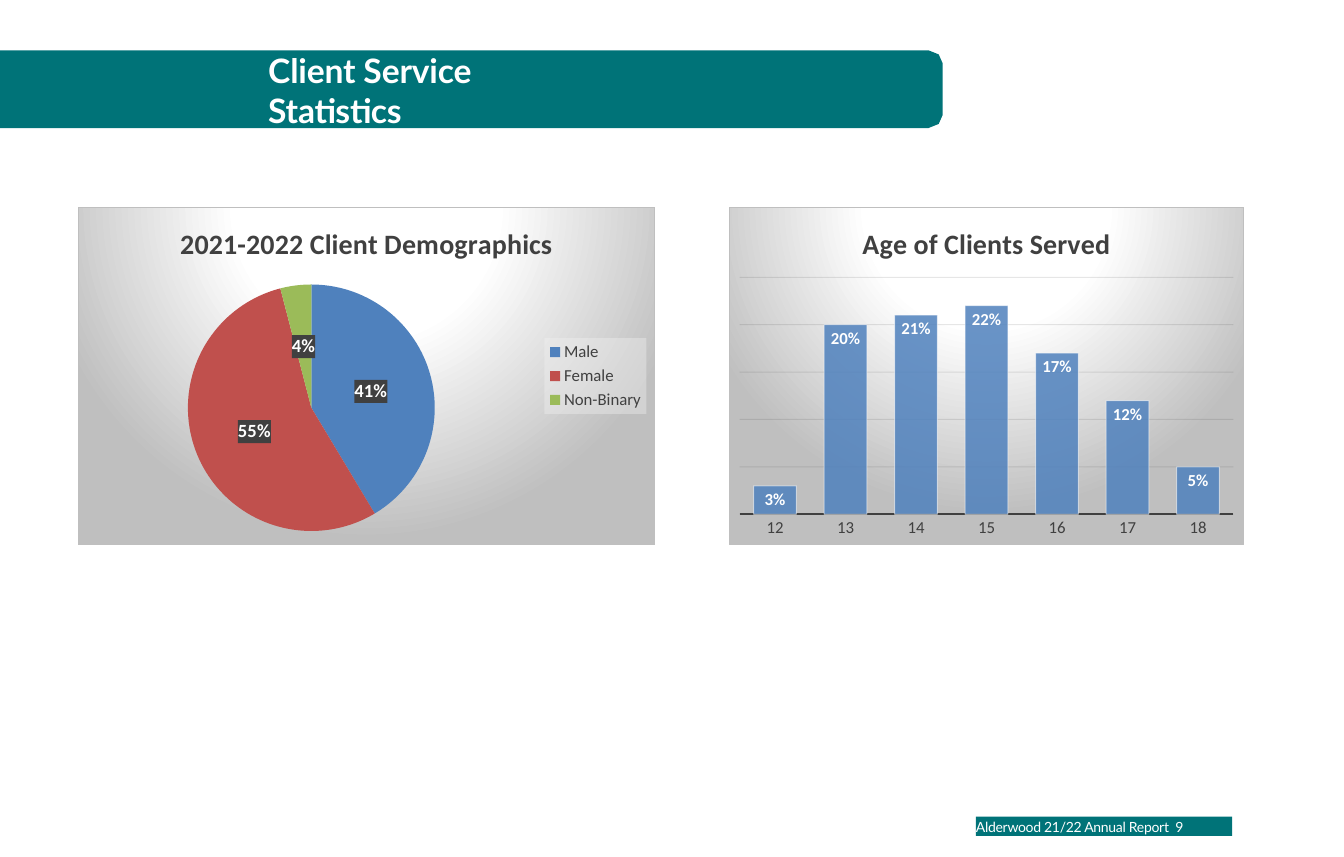
from lxml import etree
from pptx import Presentation
from pptx.chart.data import CategoryChartData
from pptx.dml.color import RGBColor
from pptx.enum.chart import XL_CHART_TYPE, XL_LABEL_POSITION, XL_LEGEND_POSITION, XL_TICK_MARK
from pptx.enum.shapes import MSO_SHAPE
from pptx.enum.text import MSO_ANCHOR, PP_ALIGN
from pptx.util import Inches, Pt

TEAL, WHITE, CHARCOAL = "007378", "FFFFFF", "404040"
NAMESPACES = ('xmlns:c="http://schemas.openxmlformats.org/drawingml/2006/chart" '
              'xmlns:a="http://schemas.openxmlformats.org/drawingml/2006/main"')


def style_font(font, name, size, color, bold=False):
    font.name, font.size, font.bold = name, Pt(size), bold
    font.color.rgb = RGBColor.from_string(color)


def chart_properties(content):
    return etree.fromstring(f"<c:spPr {NAMESPACES}>{content}</c:spPr>")


presentation = Presentation()
presentation.slide_width, presentation.slide_height = Inches(13.33), Inches(8.5)
slide = presentation.slides.add_slide(presentation.slide_layouts[5])
shapes = slide.shapes

# Title banner with a rounded right end, mirrored about its middle
middle = 0.885
upper_end = [(9.01, 0.5), (9.21, 0.5), (9.31, 0.54), (9.35, 0.63), (9.35, 0.81)]
lower_end = [(x, 2 * middle - y) for x, y in reversed(upper_end)]
builder = shapes.build_freeform(0, Inches(0.5), scale=1.0)
builder.add_line_segments([(Inches(x), Inches(y)) for x, y in upper_end + lower_end + [(0, 1.27)]])
banner = builder.convert_to_shape()

# Footer bar
footer = shapes.add_shape(MSO_SHAPE.RECTANGLE, Inches(9.68), Inches(8.1), Inches(2.54), Inches(0.19))
for shape in (banner, footer):
    shape.shadow.inherit = False
    shape.fill.solid()
    shape.fill.fore_color.rgb = RGBColor.from_string(TEAL)
    shape.line.fill.background()

# Title, moved in front of the banner
title = shapes.title
title.left, title.top, title.width, title.height = [Inches(n) for n in (2.66, 0.48, 3.34, 0.82)]
banner.element.addnext(title.element)

# Title and footer text: shape, text, size, bold, space before, top inset, character spacing
for shape, text, size, bold, space, inset, spacing in (
        (title, "Client Service Statistics", 24, True, 0.9, 0.01, -10),
        (footer, "Alderwood 21/22 Annual Report  9", 10, False, 1.7, 0.02, -20)):
    frame = shape.text_frame
    frame.text = text
    frame.word_wrap = True
    frame.vertical_anchor = MSO_ANCHOR.TOP
    frame.margin_left = frame.margin_right = frame.margin_bottom = 0
    frame.margin_top = Inches(inset)
    paragraph = frame.paragraphs[0]
    paragraph.alignment = PP_ALIGN.LEFT
    paragraph.space_before = Pt(space)
    run = paragraph.runs[0]
    style_font(run.font, "Lato", size, WHITE, bold)
    run.font._element.set("spc", str(spacing))

# Charts: heading, type, left, width, number format, categories, values
chart_specs = (
    ("2021-2022 Client Demographics", XL_CHART_TYPE.PIE, 0.77, 5.73, "General",
     ("Male", "Female", "Non-Binary"), (41, 54, 4)),
    ("Age of Clients Served", XL_CHART_TYPE.COLUMN_CLUSTERED, 7.23, 5.11, "0%",
     ("12", "13", "14", "15", "16", "17", "18"), (0.03, 0.2, 0.21, 0.22, 0.17, 0.12, 0.05)),
)
charts = []
for heading, kind, left, width, number_format, categories, values in chart_specs:
    data = CategoryChartData(number_format=number_format)
    data.categories = categories
    data.add_series("Series 1", values)
    chart = shapes.add_chart(kind, Inches(left), Inches(2.05), Inches(width), Inches(3.36), data).chart
    style_font(chart.font, "Calibri", 10, "000000")
    chart.has_title = True
    chart.chart_title.text_frame.text = heading
    chart.chart_title.include_in_layout = False
    style_font(chart.chart_title.text_frame.paragraphs[0].runs[0].font, "Calibri", 20, CHARCOAL, True)
    chart.has_legend = kind == XL_CHART_TYPE.PIE
    stops = "".join(f'<a:gs pos="{position}000"><a:srgbClr val="{color}"/></a:gs>'
                    for position, color in ((0, WHITE), (39, WHITE), (100, "BFBFBF")))
    chart._chartSpace.chart.addnext(chart_properties(
        f'<a:gradFill><a:gsLst>{stops}</a:gsLst><a:path path="circle">'
        '<a:fillToRect l="50000" t="-80000" r="50000" b="180000"/></a:path></a:gradFill>'
        '<a:ln w="9525"><a:solidFill><a:srgbClr val="BFBFBF"/></a:solidFill></a:ln>'))
    charts.append(chart)
pie, columns = charts

# Pie slices, labels and legend
pie_plot = pie.plots[0]
pie_plot.vary_by_categories = True
for index, color in enumerate(("4F81BD", "C0504D", "9BBB59")):
    fill = pie_plot.series[0].points[index].format.fill
    fill.solid()
    fill.fore_color.rgb = RGBColor.from_string(color)
pie_labels = pie_plot.series[0].data_labels
pie_labels.show_percentage, pie_labels.show_value = True, False
pie_labels.number_format, pie_labels.number_format_is_linked = "0%", False
pie_labels.position = XL_LABEL_POSITION.CENTER
style_font(pie_labels.font, "Calibri", 13.3, WHITE, True)
pie.legend.position = XL_LEGEND_POSITION.RIGHT
pie.legend.include_in_layout = False
style_font(pie.legend.font, "Calibri", 12, CHARCOAL)
for part, color, opacity in ((pie_labels, CHARCOAL, 90), (pie.legend, "F2F2F2", 39)):
    part.font._element.getparent().getparent().getparent().addprevious(chart_properties(
        f'<a:solidFill><a:srgbClr val="{color}"><a:alpha val="{opacity}000"/></a:srgbClr></a:solidFill>'))

# Age columns and labels
column_plot = columns.plots[0]
column_plot.vary_by_categories = False
column_plot.gap_width = 65
ages = column_plot.series[0]
ages.format.fill.solid()
ages.format.fill.fore_color.rgb = RGBColor.from_string("4F81BD")
ages.format.line.width = Pt(0.75)
ages.format.line.color.rgb = RGBColor.from_string(WHITE)
age_labels = ages.data_labels
age_labels.show_value = True
age_labels.number_format, age_labels.number_format_is_linked = "0%", False
age_labels.position = XL_LABEL_POSITION.INSIDE_END
style_font(age_labels.font, "Calibri", 12, WHITE, True)

# Age axes
age_axis, share_axis = columns.category_axis, columns.value_axis
age_axis.major_tick_mark = XL_TICK_MARK.NONE
style_font(age_axis.tick_labels.font, "Calibri", 12, CHARCOAL)
age_axis.format.line.width = Pt(1.5)
age_axis.format.line.color.rgb = RGBColor.from_string(CHARCOAL)
share_axis.visible = False
share_axis.minimum_scale, share_axis.maximum_scale, share_axis.major_unit = 0, 0.25, 0.05
gridlines = share_axis.major_gridlines.format.line
gridlines.width = Pt(0.75)
gridlines.color.rgb = RGBColor.from_string("0D0D0D")

# Transparency of columns, their outline and the gridlines
for fill, opacity in ((ages.format.fill, 85), (ages.format.line.fill, 50), (gridlines.fill, 10)):
    color_element = fill._xPr.find(".//{*}solidFill/{*}srgbClr")
    etree.SubElement(color_element, color_element.tag.replace("srgbClr", "alpha"), val=f"{opacity}000")

presentation.save("out.pptx")
